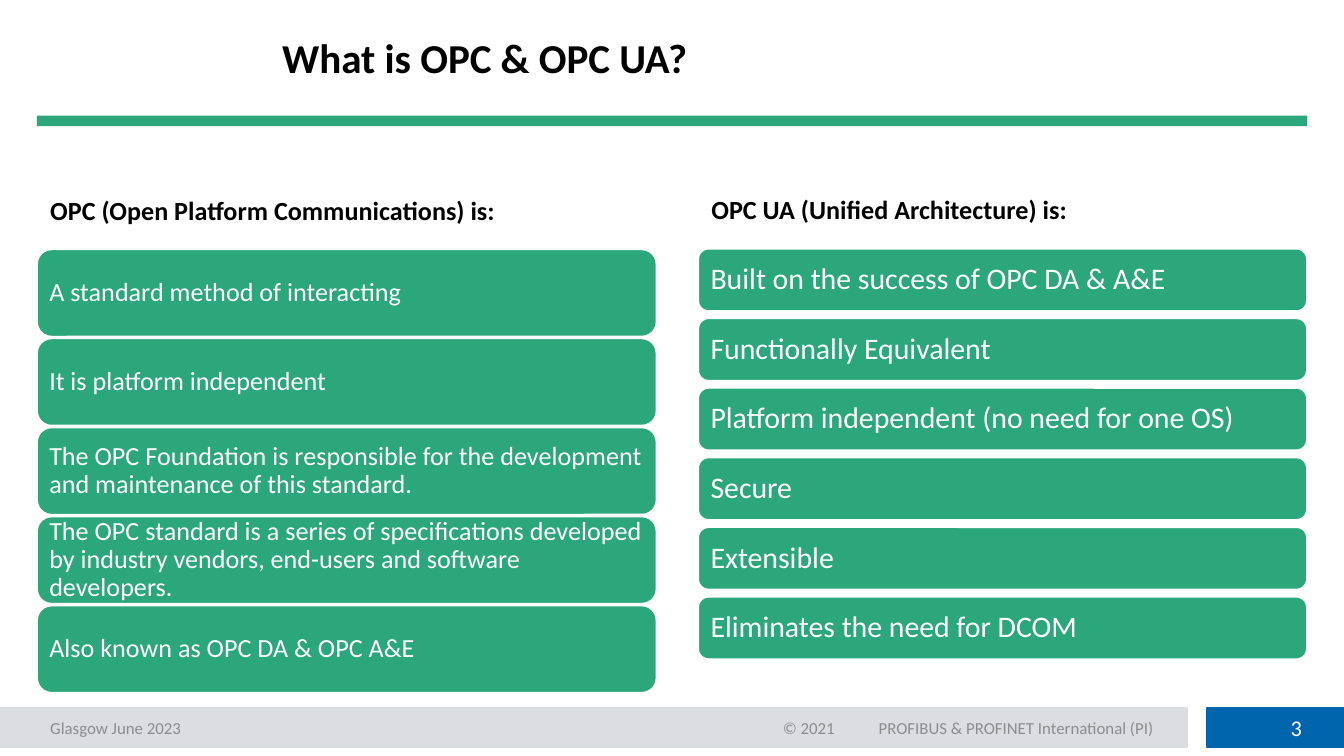
from pptx import Presentation
from pptx.dml.color import RGBColor
from pptx.enum.shapes import MSO_SHAPE
from pptx.enum.text import MSO_ANCHOR, PP_ALIGN
from pptx.util import Emu, Pt

PX = 4572  # 200 px to the inch
GREEN, BLUE, PALE = "2CA67B", "0064AD", "DCDDE0"
GREY, BLACK, WHITE = "8C8C8C", "000000", "FFFFFF"

OPC_POINTS = [
    "A standard method of interacting",
    "It is platform independent",
    "The OPC Foundation is responsible for the development and maintenance of this standard.",
    "The OPC standard is a series of specifications developed by industry vendors, "
    "end-users and software developers.",
    "Also known as OPC DA & OPC A&E",
]
UA_POINTS = [
    "Built on the success of OPC DA & A&E",
    "Functionally Equivalent",
    "Platform independent (no need for one OS)",
    "Secure",
    "Extensible",
    "Eliminates the need for DCOM",
]


def px(n):
    return Emu(round(n * PX))


def rgb(value):
    return RGBColor.from_string(value)


def write(shape, text, size, color, bold=False, align=PP_ALIGN.LEFT,
          anchor=MSO_ANCHOR.MIDDLE, spacing=None, insets=(20, 10)):
    """Fill a shape with one paragraph; insets are (sides, top and bottom)."""
    tf = shape.text_frame
    side, end = map(px, insets)
    frame = {"word_wrap": True, "vertical_anchor": anchor, "margin_left": side,
             "margin_right": side, "margin_top": end, "margin_bottom": end}
    for name, value in frame.items():
        setattr(tf, name, value)
    p = tf.paragraphs[0]
    p.alignment = align
    if spacing:
        p.line_spacing = spacing
    r = p.add_run()
    r.text = text
    for name, value in {"name": "Calibri", "size": Pt(size), "bold": bold}.items():
        setattr(r.font, name, value)
    r.font.color.rgb = rgb(color)


def add_label(s, box, text, size, color, **formats):
    write(s.shapes.add_textbox(*map(px, box)), text, size, color, **formats)


def add_block(s, box, fill, line=None, kind=MSO_SHAPE.RECTANGLE):
    sp = s.shapes.add_shape(kind, *map(px, box))
    sp.shadow.inherit = False
    sp.fill.solid()
    sp.fill.fore_color.rgb = rgb(fill)
    if line:
        sp.line.color.rgb = rgb(line)
        sp.line.width = Pt(1)
    else:
        sp.line.fill.background()
    return sp


def add_header(s, box, title):
    x, y, w, h = box
    sp = s.shapes.title
    sp.left, sp.top, sp.width, sp.height = map(px, (x + 345, y, w - 345, 136))
    write(sp, title, 22, BLACK, bold=True, spacing=0.9)
    add_block(s, (x, y + h - 16, w, 16), GREEN)


def add_column(s, box, heading, points, size, card_h, inset):
    """Place a heading and cards spread evenly down to the foot of the box."""
    x, y, w, h = box
    add_label(s, (x, y, w, 68), heading, 14, BLACK, bold=True, anchor=MSO_ANCHOR.TOP)
    top = 92
    pitch = (h - top - card_h) / (len(points) - 1)
    for i, point in enumerate(points):
        card = add_block(s, (x, y + top + i * pitch, w, card_h), GREEN, WHITE,
                         MSO_SHAPE.ROUNDED_RECTANGLE)
        write(card, point, size, WHITE, spacing=0.9, insets=(inset, inset))


def add_footer(s, box, event, year, owner, number):
    x, y, w, h = box
    add_block(s, (x, y, 1767, h), PALE, PALE)
    add_block(s, (x + 1796, y, w - 1796, h), BLUE, BLUE)
    add_label(s, (x + 55, y, 628, h), event, 9, GREY)
    add_label(s, (x + 1165, y, 88, h), year, 9, GREY, insets=(0, 0))
    add_label(s, (x + 1288, y, 452, h), owner, 9, GREY)
    add_label(s, (x + 1839, y, 118, h), number, 12, WHITE, align=PP_ALIGN.RIGHT)


def main():
    prs = Presentation()
    prs.slide_width, prs.slide_height = px(2000), px(1125)
    s = prs.slides.add_slide(prs.slide_layouts[5])
    add_footer(s, (0, 1054, 2000, 58), "Glasgow June 2023", "© 2021",
               "PROFIBUS & PROFINET International (PI)", "3")
    add_header(s, (55, 22, 1890, 166), "What is OPC & OPC UA?")
    add_column(s, (55, 279, 922, 752), "OPC (Open Platform Communications) is:",
               OPC_POINTS, 14, 130, 12)
    add_column(s, (1039, 278, 906, 703), "OPC UA (Unified Architecture) is:",
               UA_POINTS, 16, 93, 14)
    prs.save("out.pptx")


if __name__ == "__main__":
    main()
